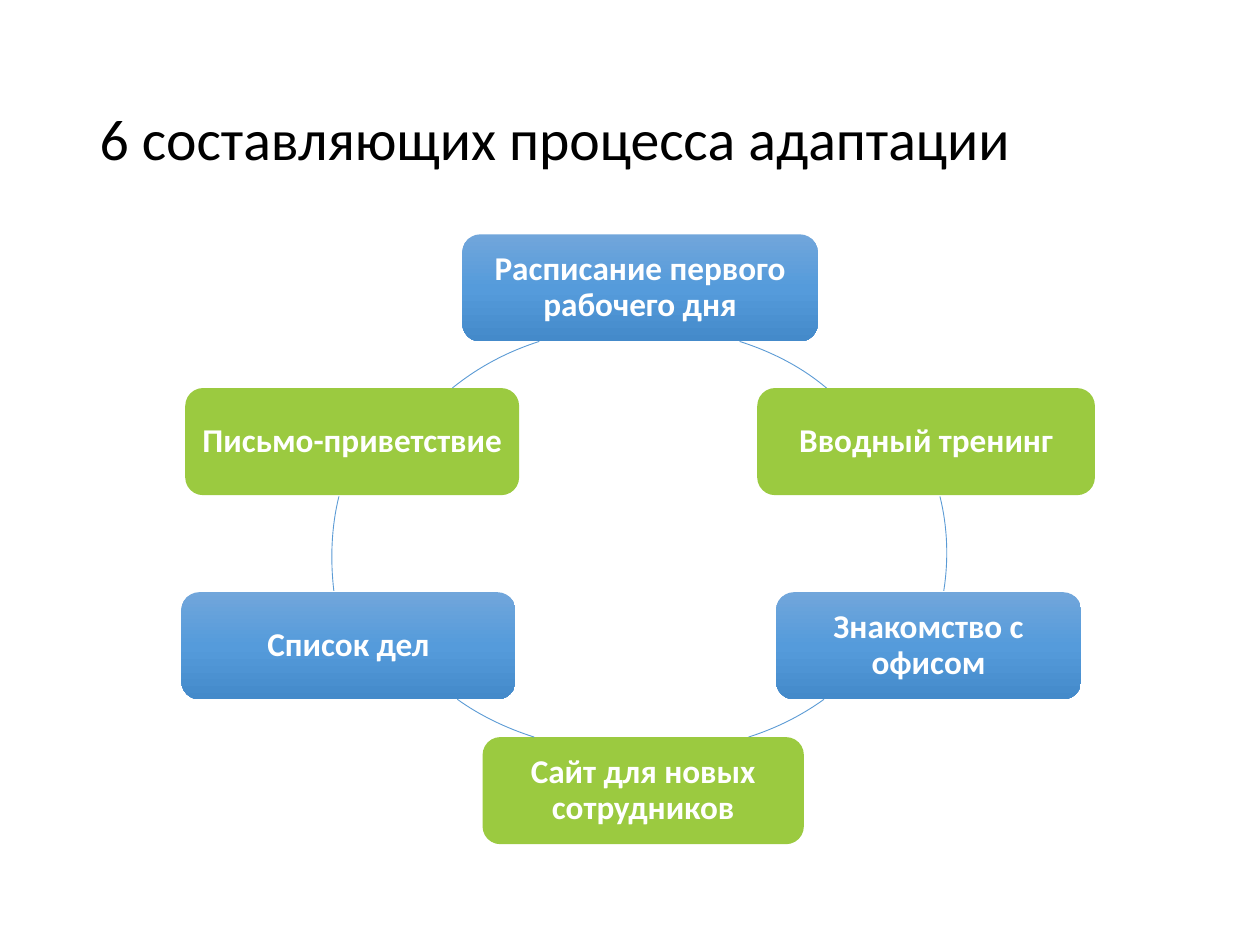
"""Build a slide showing six parts of the onboarding process as a cycle."""
import copy
from typing import NamedTuple

import lxml.etree
import pptx
import pptx.dml.color
import pptx.enum.shapes
import pptx.enum.text
import pptx.oxml.ns
import pptx.util

Inches = pptx.util.Inches
Pt = pptx.util.Pt
RGBColor = pptx.dml.color.RGBColor
qn = pptx.oxml.ns.qn

BLACK = RGBColor(0x00, 0x00, 0x00)
WHITE = RGBColor(0xFF, 0xFF, 0xFF)
GREEN = RGBColor(0x9B, 0xCA, 0x40)
ARC_BLUE = RGBColor(0x5B, 0x9B, 0xD5)
BLUE_STOPS = (
    RGBColor(0x71, 0xA6, 0xDB),
    RGBColor(0x55, 0x9B, 0xDB),
    RGBColor(0x44, 0x8A, 0xCA),
)
FONT = "Calibri"
STEP_HEIGHT = 0.85
CIRCLE_SIZE = 3.99


class Step(NamedTuple):
    label: str
    left: float
    top: float
    width: float


class Arc(NamedTuple):
    circle_left: float
    circle_top: float
    points: tuple[tuple[float, float], ...]


STEPS = (
    Step("Расписание первого рабочего дня", 3.67, 1.86, 2.82),
    Step("Вводный тренинг", 6.01, 3.08, 2.68),
    Step("Знакомство с офисом", 6.16, 4.7, 2.42),
    Step("Сайт для новых сотрудников", 3.83, 5.85, 2.55),
    Step("Список дел", 1.44, 4.7, 2.65),
    Step("Письмо-приветствие", 1.47, 3.08, 2.65),
)
ARCS = (
    Arc(3.3, 2.62, ((5.87, 2.71), (6.12, 2.79), (6.36, 2.91), (6.56, 3.08))),
    Arc(3.52, 2.4, ((7.46, 3.94), (7.52, 4.18), (7.53, 4.44), (7.49, 4.69))),
    Arc(3.35, 1.95, ((6.54, 5.55), (6.36, 5.68), (6.16, 5.78), (5.94, 5.85))),
    Arc(2.81, 1.94, ((4.24, 5.85), (4.02, 5.78), (3.81, 5.68), (3.63, 5.55))),
    Arc(2.63, 2.43, ((2.65, 4.69), (2.62, 4.44), (2.63, 4.18), (2.69, 3.94))),
    Arc(2.87, 2.62, ((3.59, 3.08), (3.8, 2.91), (4.03, 2.79), (4.28, 2.71))),
)


def add_text(frame, text: str, size: float, color: RGBColor, bold: bool, align) -> None:
    frame.word_wrap = True
    frame.auto_size = pptx.enum.text.MSO_AUTO_SIZE.NONE
    frame.vertical_anchor = pptx.enum.text.MSO_ANCHOR.MIDDLE
    paragraph = frame.paragraphs[0]
    paragraph.alignment = align
    paragraph.line_spacing = 0.9
    run = paragraph.add_run()
    run.text = text
    run.font.name = FONT
    run.font.size = Pt(size)
    run.font.bold = bold
    run.font.color.rgb = color


def fill_blue(shape) -> None:
    shape.fill.gradient()
    shape.fill.gradient_angle = 270
    stop_list = shape._element.spPr.find(".//" + qn("a:gsLst"))
    stop_list.append(copy.deepcopy(stop_list[-1]))
    for index, (stop, color) in enumerate(zip(shape.fill.gradient_stops, BLUE_STOPS)):
        stop.position = index / 2
        stop.color.rgb = color


def add_step(slide, step: Step, is_blue: bool) -> None:
    box = slide.shapes.add_shape(
        pptx.enum.shapes.MSO_SHAPE.ROUNDED_RECTANGLE,
        Inches(step.left), Inches(step.top), Inches(step.width), Inches(STEP_HEIGHT),
    )
    box.shadow.inherit = False
    box.line.fill.background()
    if is_blue:
        fill_blue(box)
    else:
        box.fill.solid()
        box.fill.fore_color.rgb = GREEN
    frame = box.text_frame
    frame.margin_left = frame.margin_right = Inches(0.08)
    frame.margin_top = frame.margin_bottom = Inches(0.08)
    add_text(frame, step.label, 19, WHITE, True, pptx.enum.text.PP_ALIGN.CENTER)


def add_arc(slide, arc: Arc) -> None:
    points = [(Inches(x), Inches(y)) for x, y in arc.points]
    builder = slide.shapes.build_freeform(*points[0])
    builder.add_line_segments(points[1:], close=False)
    curve = builder.convert_to_shape()
    curve.left, curve.top = Inches(arc.circle_left), Inches(arc.circle_top)
    curve.width = curve.height = Inches(CIRCLE_SIZE)
    outline = curve._element.spPr.find(".//" + qn("a:pathLst"))[0]
    outline.set("w", str(curve.width))
    outline.set("h", str(curve.height))
    for vertex, (x, y) in zip(list(outline.iter(qn("a:pt"))), points):
        vertex.set("x", str(x - curve.left))
        vertex.set("y", str(y - curve.top))
    bezier = lxml.etree.SubElement(outline, qn("a:cubicBezTo"))
    for segment in outline.findall(qn("a:lnTo")):
        bezier.append(segment[0])
        outline.remove(segment)
    curve.shadow.inherit = False
    curve.fill.background()
    curve.line.color.rgb = ARC_BLUE
    curve.line.width = Pt(0.5)


def main() -> None:
    presentation = pptx.Presentation()
    presentation.slide_width = Inches(10)
    presentation.slide_height = Inches(7.5)
    slide = presentation.slides.add_slide(presentation.slide_layouts[5])
    heading = slide.shapes.title
    heading.left, heading.top = Inches(0.69), Inches(0.4)
    heading.width, heading.height = Inches(8.62), Inches(1.45)
    add_text(
        heading.text_frame, "6 составляющих процесса адаптации",
        33, BLACK, False, pptx.enum.text.PP_ALIGN.LEFT,
    )
    for index, (step, arc) in enumerate(zip(STEPS, ARCS)):
        add_step(slide, step, is_blue=index % 2 == 0)
        add_arc(slide, arc)
    presentation.save("out.pptx")


if __name__ == "__main__":
    main()
